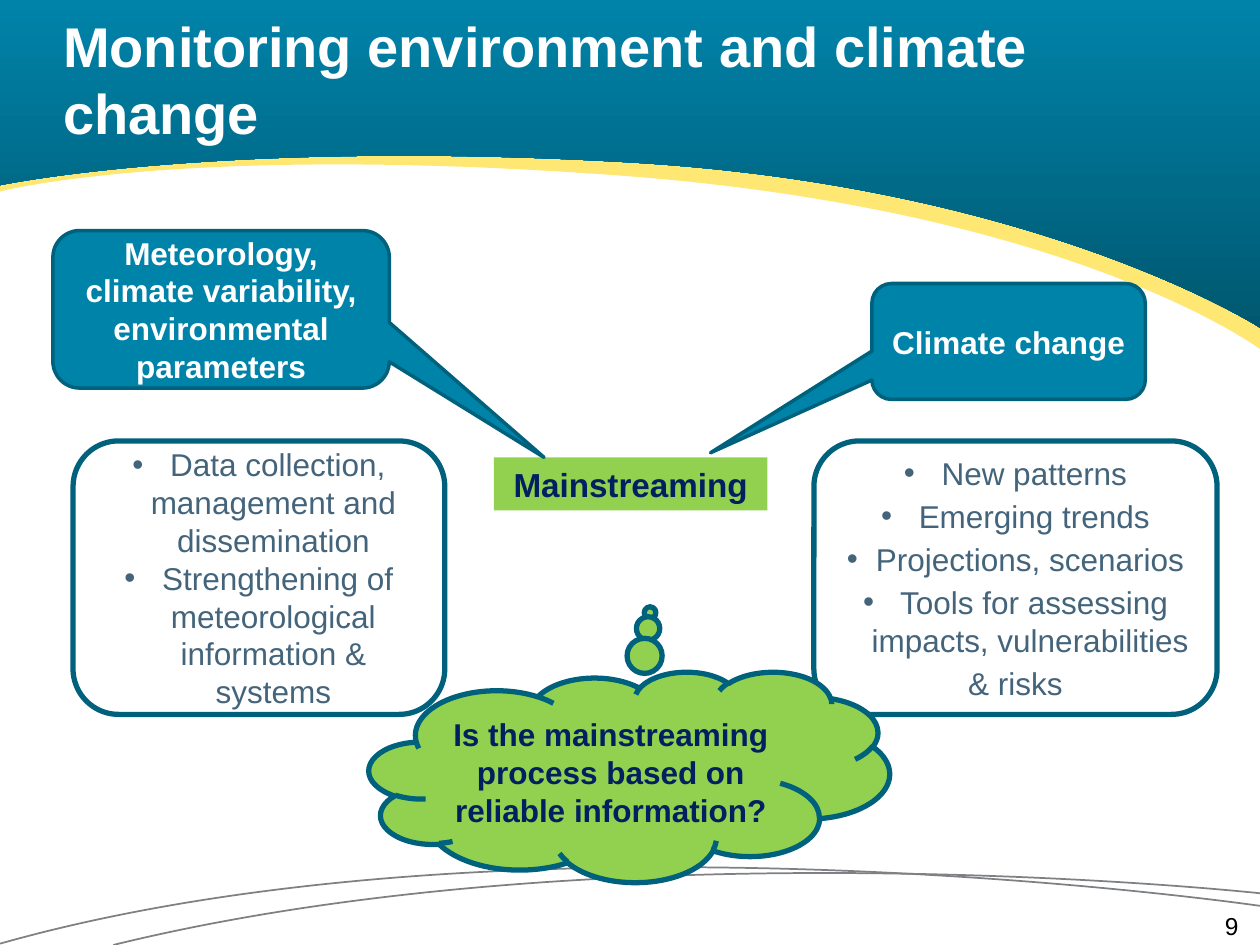
from dataclasses import dataclass

import pptx
import pptx.dml.color
import pptx.enum.shapes
import pptx.enum.text
import pptx.util
from lxml import etree
from pptx.oxml.ns import qn
from pptx.util import Inches, Pt

SHAPE = pptx.enum.shapes.MSO_SHAPE
ALIGN = pptx.enum.text.PP_ALIGN
ANCHOR = pptx.enum.text.MSO_ANCHOR

Point = tuple[float, float]


@dataclass(frozen=True)
class Theme:
    font: str = "Arial"
    blue: str = "0083A9"
    deep_blue: str = "005870"
    outline: str = "00617D"
    yellow: str = "FFE774"
    green: str = "92D050"
    navy: str = "002060"
    slate: str = "43647B"
    gray: str = "7E8083"
    white: str = "FFFFFF"
    black: str = "000000"
    title_size: float = 32
    label_size: float = 19
    body_size: float = 18
    number_size: float = 14
    bullet_indent: float = 0.23


THEME = Theme()


@dataclass(frozen=True)
class Line:
    text: str
    bullet: bool = False


@dataclass(frozen=True)
class Box:
    kind: int
    place: tuple[float, float, float, float]
    lines: tuple[Line, ...]
    text_color: str
    fill: str | None = None
    line_width: float = 0
    adjustments: tuple[float, ...] = ()
    size: float = THEME.body_size
    bold: bool = True
    space_before: float = 0


@dataclass(frozen=True)
class Curve:
    """A start point, cubic Bézier segments, and straight corners that close it."""
    start: Point
    segments: tuple[tuple[Point, Point, Point], ...]
    corners: tuple[Point, ...] = ()


CALLOUT = SHAPE.ROUNDED_RECTANGULAR_CALLOUT
BOXES = (
    Box(SHAPE.RECTANGLE, (3.92, 3.63, 2.17, 0.42), (Line("Mainstreaming"),),
        THEME.navy, THEME.green, size=THEME.label_size),
    Box(CALLOUT, (0.42, 1.83, 2.67, 1.25),
        (Line("Meteorology, climate variability, environmental parameters"),),
        THEME.white, THEME.blue, 2, (0.96, 0.94, 0.17)),
    Box(CALLOUT, (6.92, 2.25, 2.17, 0.92), (Line("Climate change"),),
        THEME.white, THEME.blue, 2, (-1.09, 0.96, 0.17)),
    Box(SHAPE.ROUNDED_RECTANGLE, (0.58, 3.5, 2.95, 2.17),
        (Line(" Data collection, management and dissemination", True),
         Line(" Strengthening of meteorological information & systems", True)),
        THEME.slate, line_width=3, bold=False),
    Box(SHAPE.ROUNDED_RECTANGLE, (6.46, 3.5, 3.2, 2.17),
        (Line(" New patterns", True), Line(" Emerging trends", True),
         Line("Projections, scenarios", True),
         Line(" Tools for assessing impacts, vulnerabilities ", True),
         Line("& risks")),
        THEME.slate, line_width=3, bold=False, space_before=3),
    Box(SHAPE.CLOUD_CALLOUT, (2.93, 5.33, 4.13, 1.67),
        (Line("Is the mainstreaming process based on reliable information?"),),
        THEME.navy, THEME.green, 3, (0.04, -0.78)),
)

FOOTER_CURVES = (
    Curve((10, 7.09), (((10, 7.09), (4.85, 6.53), (0.9, 7.5)),)),
    Curve((10, 7.19), (((10, 7.19), (4.1, 6.33), (0, 7.49)),)),
)
TOP_CORNERS = ((0, -0.01), (10, -0.01))
YELLOW_BAND = Curve((10, 2.77), (((10, 2.77), (8.54, 1.68), (5.01, 1.4)),
                                 ((1.47, 1.13), (0, 1.52), (0, 1.52))), TOP_CORNERS)
BLUE_BAND = Curve((10, 2.6), (((10, 2.6), (8.26, 1.48), (5.01, 1.29)),
                              ((1.75, 1.1), (0, 1.47), (0, 1.47))), TOP_CORNERS)


def rgb(color: str) -> pptx.dml.color.RGBColor:
    return pptx.dml.color.RGBColor.from_string(color)


def add_bullet(paragraph) -> None:
    properties = paragraph._p.get_or_add_pPr()
    indent = Inches(THEME.bullet_indent)
    properties.set("marL", str(indent))
    properties.set("indent", str(-indent))
    etree.SubElement(properties, qn("a:buFont")).set("typeface", THEME.font)
    etree.SubElement(properties, qn("a:buChar")).set("char", "•")


def write_text(shape, lines: tuple[Line, ...], *, size: float, color: str,
               bold: bool = False, align=ALIGN.CENTER, anchor=ANCHOR.MIDDLE,
               space_before: float = 0, margin: float | None = None) -> None:
    frame = shape.text_frame
    frame.word_wrap = True
    frame.vertical_anchor = anchor
    if margin is not None:
        frame.margin_left = frame.margin_right = Inches(margin)
        frame.margin_top = frame.margin_bottom = Inches(margin)
    for index, line in enumerate(lines):
        paragraph = frame.add_paragraph() if index else frame.paragraphs[0]
        if line.bullet:
            add_bullet(paragraph)
        paragraph.text = line.text
        paragraph.alignment = align
        paragraph.space_before = Pt(space_before if index else 0)
        font = paragraph.font
        font.name, font.size, font.bold = THEME.font, Pt(size), bold
        font.color.rgb = rgb(color)


def style_shape(shape, fill: str | None, line: str | None, width: float = 0) -> None:
    shape.shadow.inherit = False
    if fill:
        shape.fill.solid()
        shape.fill.fore_color.rgb = rgb(fill)
    else:
        shape.fill.background()
    if line and width:
        shape.line.color.rgb = rgb(line)
        shape.line.width = Pt(width)
    else:
        shape.line.fill.background()


def draw_curve(slide, curve: Curve):
    """Build the outline from its control points, then bend each group of three."""
    points = [curve.start, *(p for segment in curve.segments for p in segment),
              *curve.corners]
    units = [(round(x * 100), round(y * 100)) for x, y in points]
    builder = slide.shapes.build_freeform(*units[0], scale=Inches(1) / 100)
    builder.add_line_segments(units[1:], close=bool(curve.corners))
    shape = builder.convert_to_shape()
    straight = list(shape.element.iter(qn("a:lnTo")))
    for index in range(len(curve.segments)):
        group = straight[3 * index:3 * index + 3]
        bend = etree.Element(qn("a:cubicBezTo"))
        group[0].addprevious(bend)
        for segment in group:
            bend.append(segment[0])
            segment.getparent().remove(segment)
    return shape


def draw_box(slide, box: Box) -> None:
    shape = slide.shapes.add_shape(box.kind, *map(Inches, box.place))
    for index, value in enumerate(box.adjustments):
        shape.adjustments[index] = value
    style_shape(shape, box.fill, THEME.outline, box.line_width)
    write_text(shape, box.lines, size=box.size, color=box.text_color,
               bold=box.bold, space_before=box.space_before)


def main() -> None:
    presentation = pptx.Presentation()
    presentation.slide_width, presentation.slide_height = Inches(10), Inches(7.5)
    slide = presentation.slides.add_slide(presentation.slide_layouts[5])

    # Background curves and header bands
    for curve in FOOTER_CURVES:
        style_shape(draw_curve(slide, curve), None, THEME.gray, 1)
    style_shape(draw_curve(slide, YELLOW_BAND), THEME.yellow, None)
    header = draw_curve(slide, BLUE_BAND)
    style_shape(header, THEME.blue, None)
    header.fill.gradient()
    header.fill.gradient_angle = 270
    for stop, color in zip(header.fill.gradient_stops, (THEME.blue, THEME.deep_blue)):
        stop.color.rgb = rgb(color)

    # Title, brought in front of the header
    title = slide.shapes.title
    title.left, title.top = Inches(0.5), Inches(0)
    title.width, title.height = Inches(9.33), Inches(1.25)
    write_text(title, (Line("Monitoring environment and climate change"),),
               size=THEME.title_size, color=THEME.white, bold=True,
               align=ALIGN.LEFT, margin=0)
    title.element.getparent().append(title.element)

    # Page number
    number = slide.shapes.add_textbox(*map(Inches, (7.5, 7.23, 2.33, 0.18)))
    write_text(number, (Line("9"),), size=THEME.number_size, color=THEME.black,
               align=ALIGN.RIGHT, anchor=ANCHOR.TOP, margin=0)

    # Label, callouts, lists and cloud
    for box in BOXES:
        draw_box(slide, box)

    presentation.save("out.pptx")


if __name__ == "__main__":
    main()
